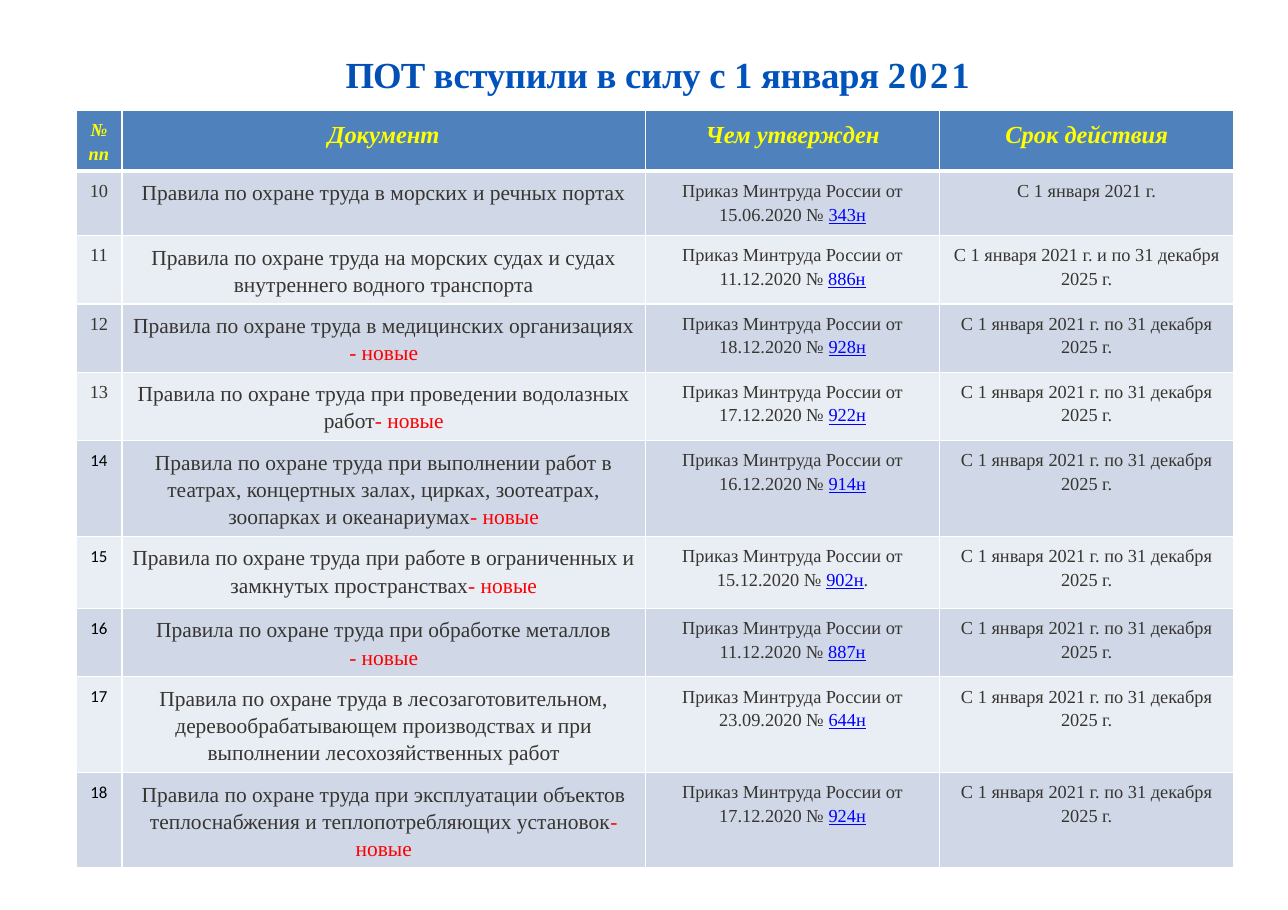
import lxml.etree
import pptx
import pptx.dml.color
import pptx.enum.text
import pptx.oxml.ns
import pptx.util

Cm, Pt = pptx.util.Cm, pptx.util.Pt

# Text, colour, letter spacing in points
HEADING = [
    ("ПОТ ", "0350B5", -0.6),
    ("вступили в силу с 1 января ", "0052BD", -0.2),
    ("2021", "0054B6", 1.8),
]
COLUMNS = [("№ пп", 1.06, 12), ("Документ", 12.07, 16),
           ("Чем утвержден", 6.78, 16), ("Срок действия", 6.78, 16)]
HEADER_HEIGHT = 1.33
NEW = "- новые"
UNTIL_2025 = "С 1 января 2021 г. по 31 декабря 2025 г."
FIRST_NUMBER = 10
FIRST_CALIBRI_NUMBER = 14

# Document, order date, order number, text after it, term, row height in cm
RULES = [
    ("Правила по охране труда в морских и речных портах",
     "15.06.2020", "343н", "", "С 1 января 2021 г.", 1.48),
    ("Правила по охране труда на морских судах и судах внутреннего водного транспорта",
     "11.12.2020", "886н", "", "С 1 января 2021 г. и по 31 декабря 2025 г.", 1.57),
    ("Правила по охране труда в медицинских организациях - новые",
     "18.12.2020", "928н", "", UNTIL_2025, 1.57),
    ("Правила по охране труда при проведении водолазных работ- новые",
     "17.12.2020", "922н", "", UNTIL_2025, 1.57),
    ("Правила по охране труда при выполнении работ в театрах, концертных залах, "
     "цирках, зоотеатрах, зоопарках и океанариумах- новые",
     "16.12.2020", "914н", "", UNTIL_2025, 2.21),
    ("Правила по охране труда при работе в ограниченных и замкнутых пространствах- новые",
     "15.12.2020", "902н", ".", UNTIL_2025, 1.66),
    ("Правила по охране труда при обработке металлов\n- новые",
     "11.12.2020", "887н", "", UNTIL_2025, 1.55),
    ("Правила по охране труда в лесозаготовительном, деревообрабатывающем "
     "производствах и при выполнении лесохозяйственных работ",
     "23.09.2020", "644н", "", UNTIL_2025, 2.21),
    ("Правила по охране труда при эксплуатации объектов теплоснабжения "
     "и теплопотребляющих установок- новые",
     "17.12.2020", "924н", "", UNTIL_2025, 2.17),
]

SERIF = "Times New Roman"
TEXT, RED, LINK = "363530", "FF0000", "0000FF"
HEADER_FILL, HEADER_TEXT = "4F81BD", "FFFF00"
BANDS = ["D0D8E8", "E9EDF4"]


def rgb(value):
    return pptx.dml.color.RGBColor.from_string(value)


def add_borders(cell, top=1, bottom=1):
    """White cell borders, widths in points."""
    properties = cell._tc.get_or_add_tcPr()
    sides = [("L", 1), ("R", 1), ("T", top), ("B", bottom)]
    for position, (side, width) in enumerate(sides):
        line = lxml.etree.Element(pptx.oxml.ns.qn(f"a:ln{side}"), w=str(Pt(width)))
        fill = lxml.etree.SubElement(line, pptx.oxml.ns.qn("a:solidFill"))
        lxml.etree.SubElement(fill, pptx.oxml.ns.qn("a:srgbClr"), val="FFFFFF")
        properties.insert(position, line)


def write_cell(cell, text, size, fill, color=TEXT, font=SERIF, header=False,
               mark="", mark_color=None, underline=False):
    """Fill a cell; the part of the text equal to mark gets its own look."""
    cell.fill.solid()
    cell.fill.fore_color.rgb = rgb(fill)
    cell.margin_left = cell.margin_right = Cm(0.16)
    cell.margin_top = cell.margin_bottom = Cm(0.16)
    lines = text.split("\n")
    for index, line in enumerate(lines):
        paragraph = (cell.text_frame.add_paragraph() if index
                     else cell.text_frame.paragraphs[0])
        paragraph.alignment = pptx.enum.text.PP_ALIGN.CENTER
        paragraph.line_spacing = 1.15
        paragraph.font.name, paragraph.font.size = font, Pt(size)
        paragraph.font.bold = paragraph.font.italic = header
        paragraph.font.color.rgb = rgb(color)
        for part in line.partition(mark) if mark else [line]:
            if not part:
                continue
            run = paragraph.add_run()
            run.text = part
            # Table style settings outrank paragraph ones in some viewers
            run.font.name, run.font.size = font, Pt(size)
            run.font.bold = run.font.italic = header
            run.font.color.rgb = rgb(mark_color if part == mark else color)
            if part == mark and underline:
                run.font.underline = True


def add_heading(slide):
    title = slide.shapes.title
    title.left, title.top, title.width, title.height = Cm(1.52), Cm(1.19), Cm(27.28), Cm(1.47)
    frame = title.text_frame
    frame.margin_left = frame.margin_right = frame.margin_top = frame.margin_bottom = 0
    frame.vertical_anchor = pptx.enum.text.MSO_ANCHOR.TOP
    frame.auto_size = pptx.enum.text.MSO_AUTO_SIZE.NONE
    frame.word_wrap = True
    paragraph = frame.paragraphs[0]
    paragraph.alignment = pptx.enum.text.PP_ALIGN.CENTER
    paragraph.font.name, paragraph.font.size, paragraph.font.bold = SERIF, Pt(24), True
    for text, color, spacing in HEADING:
        run = paragraph.add_run()
        run.text = text
        run.font.name, run.font.size, run.font.bold = SERIF, Pt(24), True
        run.font.color.rgb = rgb(color)
        run._r.get_or_add_rPr().set("spc", str(round(spacing * 100)))


def add_rules(slide):
    heights = [HEADER_HEIGHT] + [rule[-1] for rule in RULES]
    widths = [width for _, width, _ in COLUMNS]
    table = slide.shapes.add_table(len(heights), len(widths), Cm(1.75), Cm(2.55),
                                   Cm(sum(widths)), Cm(sum(heights))).table
    table.horz_banding = False
    for row, height in zip(table.rows, heights):
        row.height = Cm(height)

    for index, (label, width, size) in enumerate(COLUMNS):
        table.columns[index].width = Cm(width)
        cell = table.cell(0, index)
        write_cell(cell, label, size, HEADER_FILL, HEADER_TEXT, header=True)
        add_borders(cell, bottom=3)

    for index, (document, date, order, ending, term, _) in enumerate(RULES):
        number, fill = FIRST_NUMBER + index, BANDS[index % 2]
        cells = table.rows[index + 1].cells
        if number < FIRST_CALIBRI_NUMBER:
            write_cell(cells[0], str(number), 12, fill)
        else:
            write_cell(cells[0], str(number), 11, fill, "000000", "Calibri")
        write_cell(cells[1], document, 14, fill, mark=NEW, mark_color=RED)
        write_cell(cells[2], f"Приказ Минтруда России от {date} № {order}{ending}", 12, fill,
                   mark=order, mark_color=LINK, underline=True)
        write_cell(cells[3], term, 12, fill)
        for cell in cells:
            add_borders(cell, top=1 if index else 3)


def main():
    presentation = pptx.Presentation()
    presentation.slide_width, presentation.slide_height = Cm(29.69), Cm(20.98)
    slide = presentation.slides.add_slide(presentation.slide_layouts[5])
    add_heading(slide)
    add_rules(slide)
    presentation.save("out.pptx")


if __name__ == "__main__":
    main()
